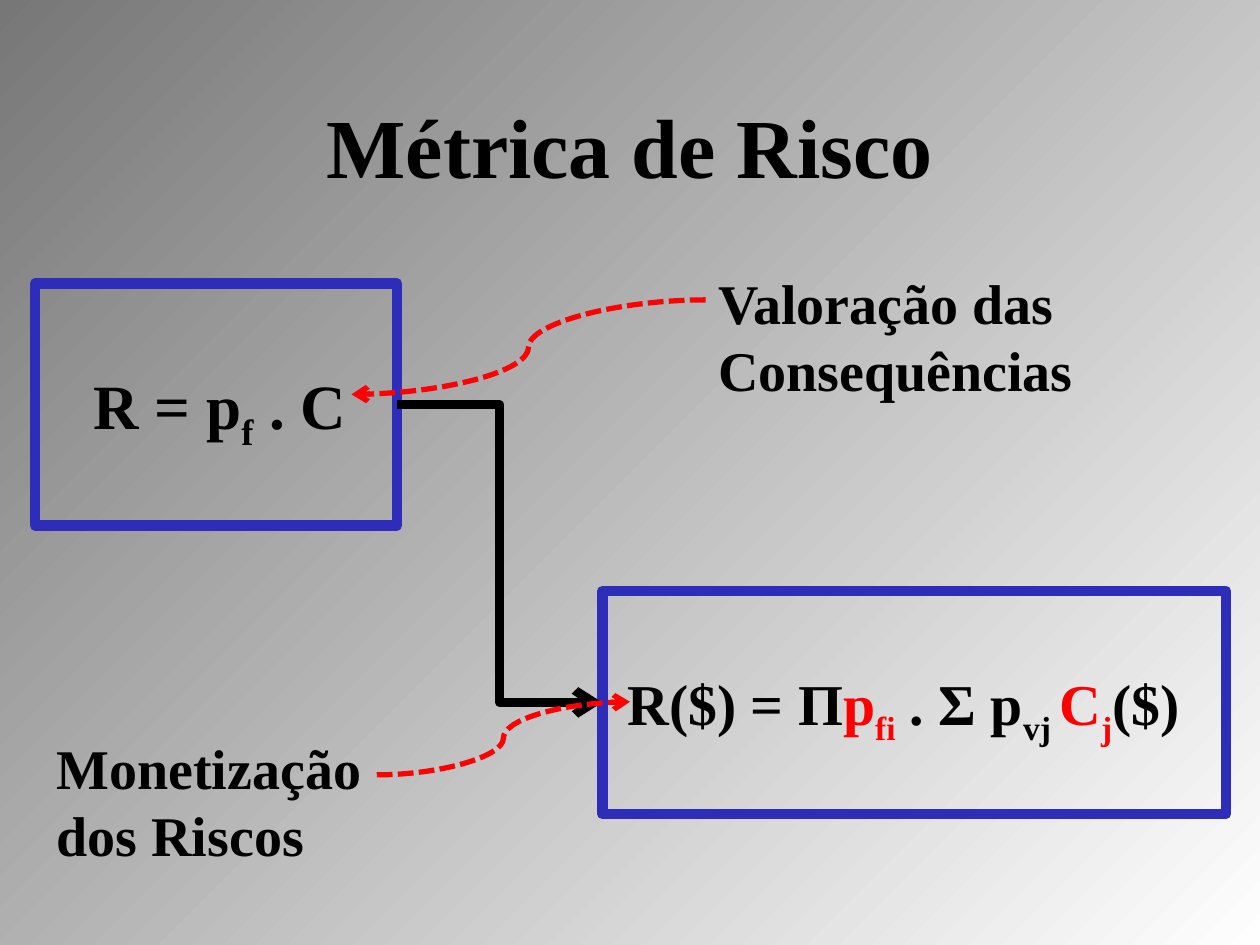
import dataclasses
import pptx
import pptx.util
import pptx.dml.color
import pptx.enum.dml
import pptx.enum.shapes
import pptx.enum.text
import pptx.oxml
import pptx.oxml.ns

COLS, ROWS = 100, 75
WIDE, HIGH = pptx.util.Inches(10), pptx.util.Inches(7.5)
FONT = "Times New Roman"
BLACK, RED, BLUE = "000000", "FF0000", "2D2DB9"
ALIGN = pptx.enum.text.PP_ALIGN
ANCHOR = pptx.enum.text.MSO_ANCHOR
LINK = pptx.enum.shapes.MSO_CONNECTOR


@dataclasses.dataclass(frozen=True)
class Area:
    col: float
    row: float
    cols: float
    rows: float

    def place(self) -> tuple:
        return across(self.col), down(self.row), across(self.cols), down(self.rows)


@dataclasses.dataclass(frozen=True)
class Term:
    text: str
    tint: str = BLACK
    sub: bool = False


@dataclasses.dataclass(frozen=True)
class Panel:
    area: Area
    size: int
    left: float
    right: float
    terms: tuple


@dataclasses.dataclass(frozen=True)
class Label:
    area: Area
    size: int
    text: str
    align: ALIGN = ALIGN.LEFT
    anchor: ANCHOR = ANCHOR.TOP


@dataclasses.dataclass(frozen=True)
class Arrow:
    kind: LINK
    start: tuple
    end: tuple
    tint: str
    width: float
    dashed: bool = False


PANELS = (
    Panel(Area(2.8, 22.5, 28.7, 19.2), 36, 0.6, 0, (
        Term("R = p"), Term("f", sub=True), Term(" . C"))),
    Panel(Area(47.8, 46.9, 49.5, 17.7), 33, 0, 1.7, (
        Term("R($) = Π"), Term("p", RED), Term("fi", RED, True),
        Term(" . Σ p"), Term("vj ", sub=True),
        Term("C", RED), Term("j", RED, True), Term("($)"))),
)
LABELS = (
    Label(Area(12.5, 6.5, 75, 10), 48, "Métrica de Risco", ALIGN.CENTER, ANCHOR.MIDDLE),
    Label(Area(56, 20.8, 30.5, 11.8), 32, "Valoração das\nConsequências"),
    Label(Area(3.5, 57.7, 26.5, 11.8), 32, "Monetização\ndos Riscos"),
)
STEP = Arrow(LINK.ELBOW, (31.5, 32.1), (47.8, 55.75), BLACK, 5)
CURVES = (
    Arrow(LINK.CURVE, (56, 23.8), (27.9, 31.3), RED, 3, True),
    Arrow(LINK.CURVE, (29.9, 61.5), (50, 55.7), RED, 3, True),
)


def across(cols: float) -> int:
    return round(WIDE * cols / COLS)


def down(rows: float) -> int:
    return round(HIGH * rows / ROWS)


def paint(spot, tint: str) -> None:
    spot.rgb = pptx.dml.color.RGBColor.from_string(tint)


def style(run, size: int, tint: str = BLACK) -> None:
    run.font.name = FONT
    run.font.size = pptx.util.Pt(size)
    run.font.bold = True
    paint(run.font.color, tint)


def add_mark(line, tag: str, **attrs: str) -> None:
    mark = pptx.oxml.parse_xml(f"<a:{tag} {pptx.oxml.ns.nsdecls('a')}/>")
    for name, value in attrs.items():
        mark.set(name, value)
    line.append(mark)


def draw_line(item, tint: str, width: float, dashed: bool = False) -> None:
    item.line.fill.solid()
    paint(item.line.fill.fore_color, tint)
    item.line.width = pptx.util.Pt(width)
    if dashed:
        item.line.dash_style = pptx.enum.dml.MSO_LINE.SQUARE_DOT
        item.line._ln.prstDash.set("val", "sysDash")
    add_mark(item.line._ln, "round")


def draw_panel(slide, panel: Panel):
    box = slide.shapes.add_shape(
        pptx.enum.shapes.MSO_SHAPE.RECTANGLE, *panel.area.place())
    box.shadow.inherit = False
    box.fill.background()
    draw_line(box, BLUE, 6)
    frame = box.text_frame
    frame.word_wrap = False
    frame.vertical_anchor = ANCHOR.MIDDLE
    frame.margin_left, frame.margin_right = across(panel.left), across(panel.right)
    frame.margin_top, frame.margin_bottom = down(0.8), 0
    para = frame.paragraphs[0]
    para.alignment = ALIGN.CENTER
    for term in panel.terms:
        run = para.add_run()
        run.text = term.text
        style(run, panel.size, term.tint)
        if term.sub:
            run.font._element.set("baseline", "-25000")
    return box


def draw_label(slide, label: Label) -> None:
    frame = slide.shapes.add_textbox(*label.area.place()).text_frame
    frame.word_wrap = label.align == ALIGN.CENTER
    frame.vertical_anchor = label.anchor
    frame.text = label.text
    for para in frame.paragraphs:
        para.alignment = label.align
        for run in para.runs:
            style(run, label.size)


def draw_arrow(slide, arrow: Arrow):
    (left, top), (right, base) = arrow.start, arrow.end
    link = slide.shapes.add_connector(
        arrow.kind, across(left), down(top), across(right), down(base))
    draw_line(link, arrow.tint, arrow.width, arrow.dashed)
    add_mark(link.line._ln, "tailEnd", type="arrow")
    add_mark(link._element.spPr, "effectLst")
    return link


def main() -> None:
    deck = pptx.Presentation()
    deck.slide_width, deck.slide_height = WIDE, HIGH
    slide = deck.slides.add_slide(deck.slide_layouts[6])
    fill = slide.background.fill
    fill.gradient()
    fill.gradient_angle = 315
    for stop, tint in zip(fill.gradient_stops, ("777777", "FEFEFE")):
        paint(stop.color, tint)
    first, second = [draw_panel(slide, panel) for panel in PANELS]
    step = draw_arrow(slide, STEP)
    step.begin_connect(first, 3)
    step.end_connect(second, 1)
    for label in LABELS:
        draw_label(slide, label)
    for curve in CURVES:
        draw_arrow(slide, curve)
    deck.save("out.pptx")


if __name__ == "__main__":
    main()
